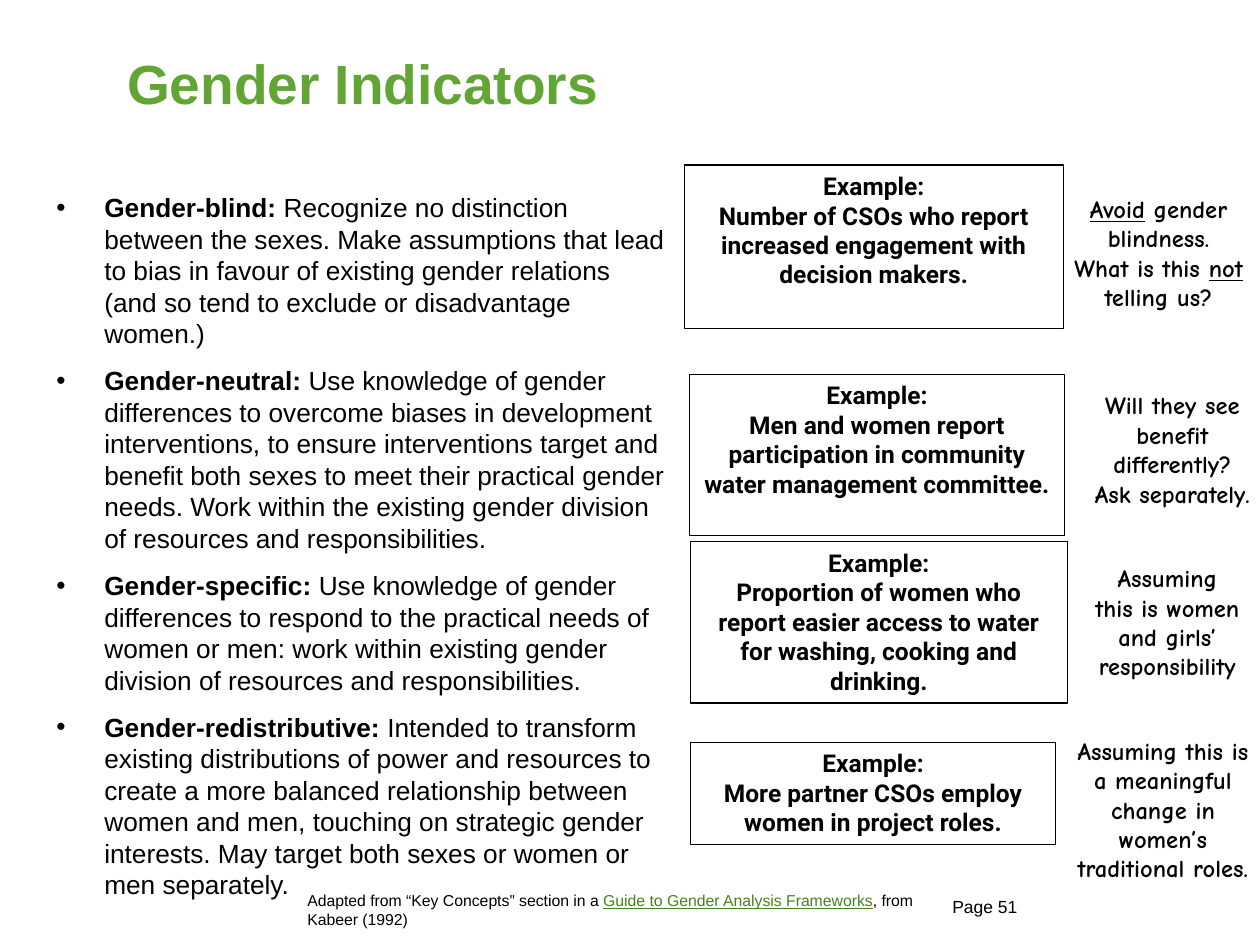
"""Build the Gender Indicators slide on a grid of 100 columns by 75 rows."""
from dataclasses import dataclass
from typing import Optional

from pptx import Presentation
from pptx.dml.color import RGBColor as Rgb
from pptx.enum.shapes import MSO_SHAPE as Kind
from pptx.enum.text import MSO_ANCHOR as Anchor, PP_ALIGN as Align
from pptx.oxml import parse_xml
from pptx.oxml.ns import nsdecls
from pptx.util import Inches, Pt

HUES = {"ink": "000000", "head": "61A534", "link": "44841A"}
WIDE, HIGH = Inches(10), Inches(7.5)
COL, ROW = WIDE / 100, HIGH / 75


@dataclass(frozen=True)
class Area:
    x: float
    y: float
    w: float
    h: float

    def place(self) -> tuple[int, int, int, int]:
        return (round(self.x * COL), round(self.y * ROW),
                round(self.w * COL), round(self.h * ROW))


@dataclass(frozen=True)
class Style:
    font: str
    size: float
    bold: bool = False
    hue: str = "ink"
    align: Align = Align.LEFT
    mark_bold: Optional[bool] = None
    mark_line: bool = False
    mark_hue: Optional[str] = None


@dataclass(frozen=True)
class Pair:
    frame: Area
    case: str
    side: Area
    note: str


TITLE = Style("Arial", 31.5, True, "head")
BODY = Style("Arial", 15, mark_bold=True)
CASE = Style("Roboto", 14, True, align=Align.CENTER)
NOTE = Style("Comic Neue", 14, True, align=Align.CENTER, mark_line=True)
CITE = Style("Arial", 9, mark_line=True, mark_hue="link")
PAGE = Style("Arial", 10)

TERMS = (
    "|Gender-blind: |Recognize no distinction between the sexes. Make "
    "assumptions that lead to bias in favour of existing gender relations "
    "(and so tend to exclude or disadvantage women.)",
    "|Gender-neutral: |Use knowledge of gender differences to overcome biases "
    "in development interventions, to ensure interventions target and benefit "
    "both sexes to meet their practical gender needs. Work within the existing "
    "gender division of resources and responsibilities.",
    "|Gender-specific: |Use knowledge of gender differences to respond to the "
    "practical needs of women or men: work within existing gender division of "
    "resources and responsibilities.",
    "|Gender-redistributive: |Intended to transform existing distributions of "
    "power and resources to create a more balanced relationship between women "
    "and men, touching on strategic gender interests. May target both sexes or "
    "women or men separately.",
)

PAIRS = (
    Pair(Area(54.3, 13.1, 30.1, 13),
         "Number of CSOs who report increased engagement with decision makers.",
         Area(83.9, 14.9, 16.1, 10.4),
         "|Avoid| gender blindness.\nWhat is this |not| telling us?"),
    Pair(Area(54.7, 29.7, 29.8, 12.8),
         "Men and women report participation in community water management "
         "committee.",
         Area(85.9, 30.5, 14.3, 10.4),
         "Will they see benefit differently? Ask separately."),
    Pair(Area(54.8, 43, 29.9, 12.8),
         "Proportion of women who report easier access to water for washing, "
         "cooking and drinking.",
         Area(85.9, 44.2, 13.5, 10.4),
         "Assuming this is women and girls’ responsibility"),
    Pair(Area(54.8, 58.9, 29, 8.1),
         "More partner CSOs employ women in project roles.",
         Area(83.9, 57.9, 16.8, 12.8),
         "Assuming this is a meaningful change in women’s traditional roles."),
)


def color(name: str) -> Rgb:
    return Rgb.from_string(HUES[name])


def fill_line(para, line: str, style: Style) -> None:
    para.alignment = style.align
    for spot, piece in enumerate(line.split("|")):
        if not piece:
            continue
        run = para.add_run()
        run.text = piece
        font, mark = run.font, spot % 2 == 1
        font.name, font.size = style.font, Pt(style.size)
        font.bold = bool(style.mark_bold) if mark and style.mark_bold else style.bold
        font.underline = mark and style.mark_line
        font.color.rgb = color(style.mark_hue if mark and style.mark_hue else style.hue)


def write(shape, text: str, style: Style) -> None:
    frame = shape.text_frame
    frame.word_wrap = True
    frame.vertical_anchor = Anchor.TOP
    for spot, line in enumerate(text.split("\n")):
        para = frame.add_paragraph() if spot else frame.paragraphs[0]
        fill_line(para, line, style)


def add_text(slide, area: Area, text: str, style: Style):
    shape = slide.shapes.add_textbox(*area.place())
    write(shape, text, style)
    return shape


def add_case(slide, area: Area, text: str) -> None:
    shape = slide.shapes.add_shape(Kind.RECTANGLE, *area.place())
    shape.shadow.inherit = False
    shape.fill.background()
    shape.line.color.rgb = color("ink")
    shape.line.width = Pt(0.75)
    write(shape, f"Example:\n{text}", CASE)


def add_terms(slide, area: Area) -> None:
    shape = add_text(slide, area, "\n".join(TERMS), BODY)
    for spot, para in enumerate(shape.text_frame.paragraphs):
        props = para._p.get_or_add_pPr()
        props.set("marL", str(Inches(0.38)))
        props.set("indent", str(-Inches(0.38)))
        props.append(parse_xml(f'<a:buFont {nsdecls("a")} typeface="Arial"/>'))
        props.append(parse_xml(f'<a:buChar {nsdecls("a")} char="•"/>'))
        if spot:
            para.space_before = Pt(9)


def main() -> None:
    deck = Presentation()
    deck.slide_width, deck.slide_height = WIDE, HIGH
    slide = deck.slides.add_slide(deck.slide_layouts[6])
    title = add_text(slide, Area(9.1, 3.6, 67.5, 5.9), "Gender Indicators", TITLE)
    title.text_frame.vertical_anchor = Anchor.MIDDLE
    add_terms(slide, Area(3.5, 14.7, 50.6, 37.2))
    for pair in PAIRS:
        add_case(slide, pair.frame, pair.case)
        add_text(slide, pair.side, pair.note, NOTE)
    add_text(slide, Area(23.4, 70.2, 53.2, 4),
             "Adapted from “Key Concepts” section in a "
             "|Guide to Gender Analysis Frameworks|, from Kabeer (1992)", CITE)
    add_text(slide, Area(74.6, 70.6, 13.4, 1.8), "Page 51", PAGE)
    deck.save("out.pptx")


if __name__ == "__main__":
    main()
